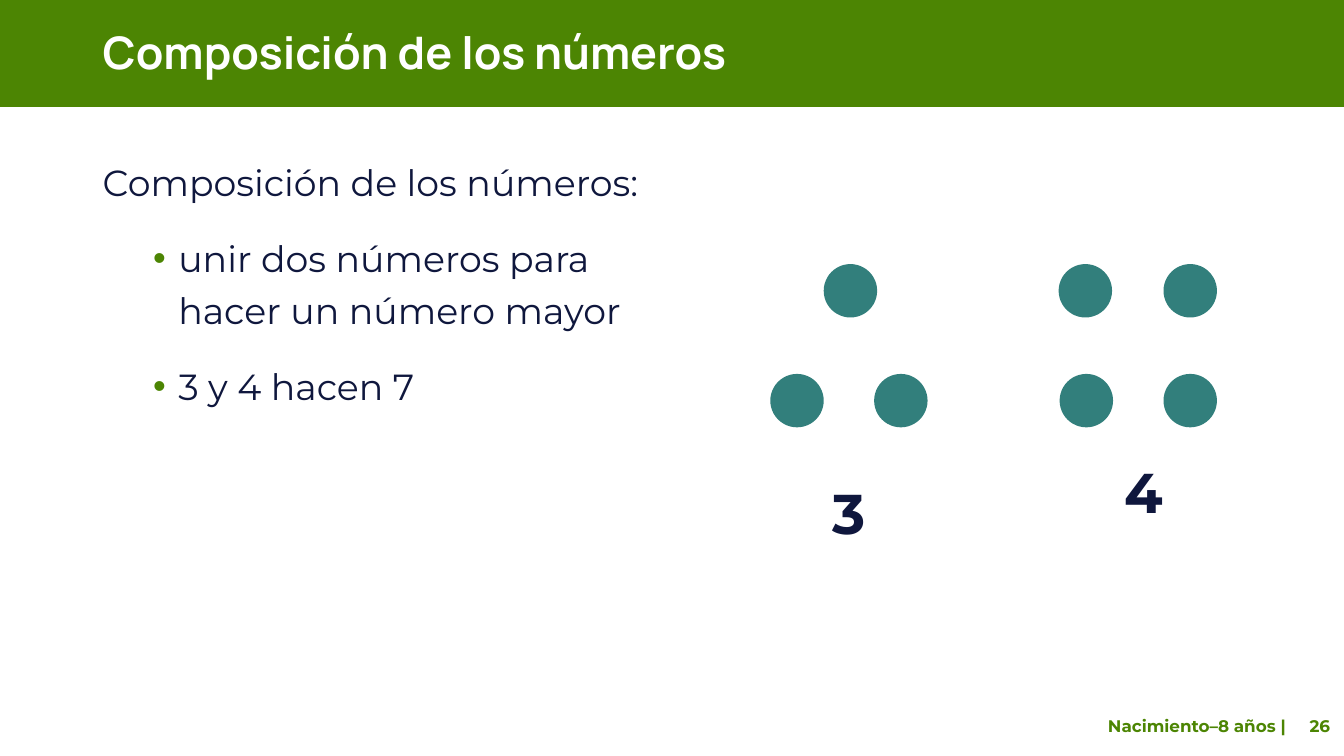
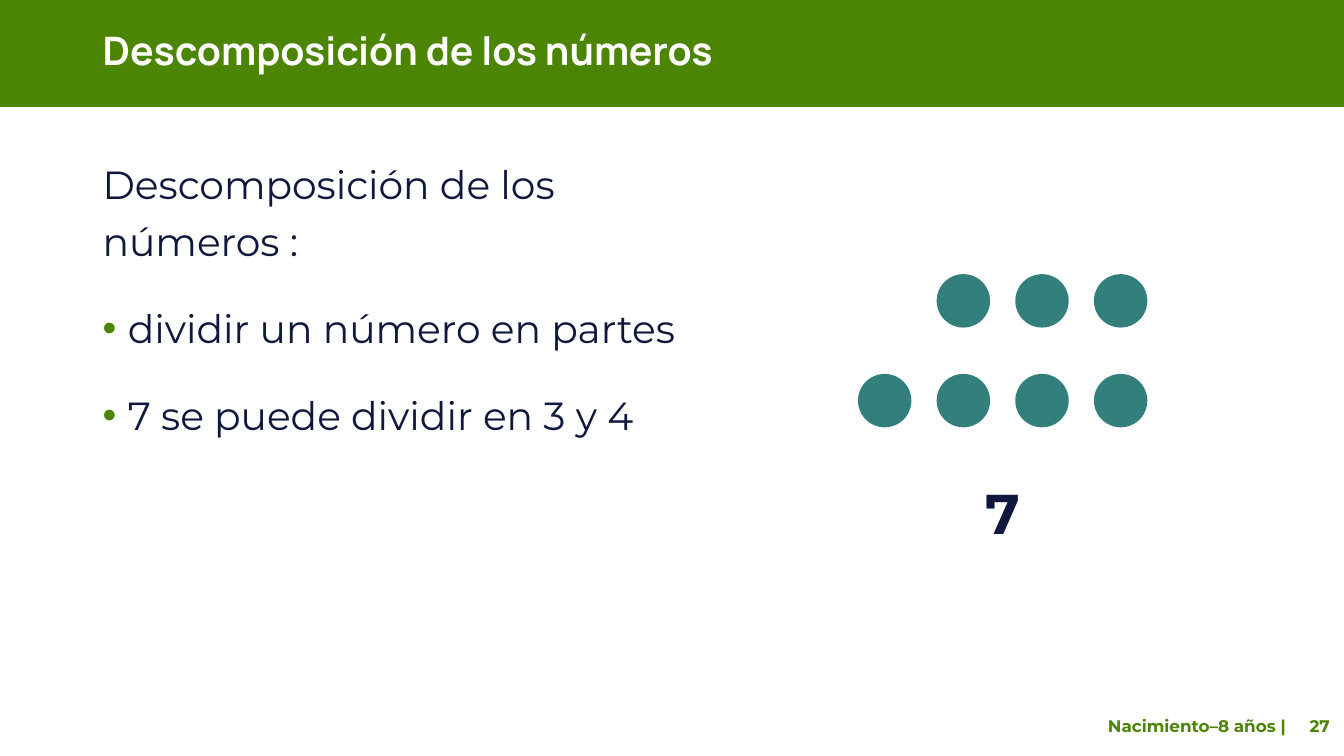
import pptx
import pptx.dml.color
import pptx.enum.shapes
import pptx.enum.text
import pptx.oxml
import pptx.oxml.ns
import pptx.util

Inches = pptx.util.Inches
Pt = pptx.util.Pt
RGBColor = pptx.dml.color.RGBColor
PP_ALIGN = pptx.enum.text.PP_ALIGN
MSO_SHAPE = pptx.enum.shapes.MSO_SHAPE

# Shared look
GREEN = RGBColor(0x4C, 0x85, 0x03)
TEAL = RGBColor(0x32, 0x7F, 0x7C)
NAVY = RGBColor(0x0F, 0x17, 0x3D)
WHITE = RGBColor(0xFF, 0xFF, 0xFF)
TITLE_FONT = "Manrope"
BODY_FONT = "Montserrat"
SLIDE_WIDTH, SLIDE_HEIGHT = 13.33, 7.5
MARGIN = 0.92
DOT_SIZE = 0.53
LOWER_ROW = 3.71
LABEL_TOP = 4.57


def add_filled_shape(shapes, kind, left, top, width, height, color):
    shape = shapes.add_shape(
        kind, Inches(left), Inches(top), Inches(width), Inches(height))
    shape.shadow.inherit = False
    shape.fill.solid()
    shape.fill.fore_color.rgb = color
    shape.line.fill.background()


def add_text_frame(page, left, top, width, height):
    box = page.shapes.add_textbox(
        Inches(left), Inches(top), Inches(width), Inches(height))
    box.text_frame.word_wrap = True
    return box.text_frame


def style_font(para, name, size, color, bold=False):
    para.font.name = name
    para.font.size = Pt(size)
    para.font.bold = bold
    para.font.color.rgb = color


def append_xml(para, tag, content):
    """Append one drawing element to the paragraph properties."""
    namespace = pptx.oxml.ns.nsdecls("a")
    para._p.get_or_add_pPr().append(
        pptx.oxml.parse_xml(f"<a:{tag} {namespace} {content}"))


def add_bullet(para, indent):
    properties = para._p.get_or_add_pPr()
    properties.set("marL", str(Inches(indent)))
    properties.set("indent", str(Inches(-0.25)))
    append_xml(para, "buClr", f'><a:srgbClr val="{GREEN}"/></a:buClr>')
    append_xml(para, "buFont", 'typeface="Arial"/>')
    append_xml(para, "buChar", 'char="•"/>')


def add_footer(page, number):
    frame = add_text_frame(page, 9.49, 7, 3.81, 0.4)
    frame.vertical_anchor = pptx.enum.text.MSO_ANCHOR.MIDDLE
    para = frame.paragraphs[0]
    para.text = f"\tNacimiento–8 años |\t{number}"
    stops = "".join(f'<a:tab pos="{Inches(stop)}" algn="l"/>'
                    for stop in (1.4, 3.4))
    append_xml(para, "tabLst", f">{stops}</a:tabLst>")
    style_font(para, BODY_FONT, 12, GREEN, bold=True)


def add_page(deck, title, title_size, number):
    page = deck.slides.add_slide(deck.slide_layouts[6])
    add_filled_shape(page.shapes, MSO_SHAPE.RECTANGLE,
                     0, 0, SLIDE_WIDTH, 1.06, GREEN)
    add_footer(page, number)
    frame = add_text_frame(page, MARGIN, 0.26, 11.82, 0.59)
    frame.auto_size = pptx.enum.text.MSO_AUTO_SIZE.SHAPE_TO_FIT_TEXT
    para = frame.paragraphs[0]
    para.text = title
    para.line_spacing = 0.9
    style_font(para, TITLE_FONT, title_size, WHITE, bold=True)
    return page


def add_body(page, width, size, intro, bullets, indent, space_before):
    frame = add_text_frame(page, MARGIN, 1.45, width, 3.01)
    for index, text in enumerate([intro, *bullets]):
        para = frame.add_paragraph() if index else frame.paragraphs[0]
        para.text = text
        para.line_spacing = 1.2
        para.space_after = Pt(12)
        if index:
            para.space_before = Pt(space_before)
            add_bullet(para, indent)
        style_font(para, BODY_FONT, size, NAVY)


def add_dots(page, rows):
    """Draw one group of dots from (top, lefts) rows."""
    group = page.shapes.add_group_shape()
    for top, lefts in rows:
        for left in lefts:
            add_filled_shape(group.shapes, MSO_SHAPE.OVAL,
                             left, top, DOT_SIZE, DOT_SIZE, TEAL)


def add_label(page, left, width, text, line_spacing=1.2):
    para = add_text_frame(page, left, LABEL_TOP, width, 1.2).paragraphs[0]
    para.text = text
    para.alignment = PP_ALIGN.CENTER
    para.line_spacing = line_spacing
    style_font(para, BODY_FONT, 40, NAVY, bold=True)


def build_composition(deck):
    page = add_page(deck, "Composición de los números", 32, 26)
    add_body(page, 5.67, 25.9, "Composición de los números:",
             ["unir dos números para hacer un número mayor",
              "3 y 4 hacen 7"], indent=0.75, space_before=5)
    # Three dots beside four dots
    upper_row = 2.62
    add_dots(page, [(upper_row, [8.17]), (LOWER_ROW, [7.64, 8.67])])
    add_label(page, 7.64, 1.56, "3")
    add_dots(page, [(upper_row, [10.5, 11.54]), (LOWER_ROW, [10.51, 11.54])])
    add_label(page, 10.56, 1.56, "4", line_spacing=0.9)


def build_decomposition(deck):
    page = add_page(deck, "Descomposición de los números", 28, 27)
    add_body(page, 5.97, 28, "Descomposición de los números :",
             ["dividir un número en partes",
              "7 se puede dividir en 3 y 4"], indent=0.25, space_before=10)
    # Seven dots in rows of three and four
    first_left, pitch = 8.51, 0.78
    lefts = [first_left + pitch * column for column in range(4)]
    add_dots(page, [(2.72, lefts[1:]), (LOWER_ROW, lefts)])
    add_label(page, first_left, 2.87, "7")


def main():
    deck = pptx.Presentation()
    deck.slide_width = Inches(SLIDE_WIDTH)
    deck.slide_height = Inches(SLIDE_HEIGHT)
    build_composition(deck)
    build_decomposition(deck)
    deck.save("out.pptx")


if __name__ == "__main__":
    main()
